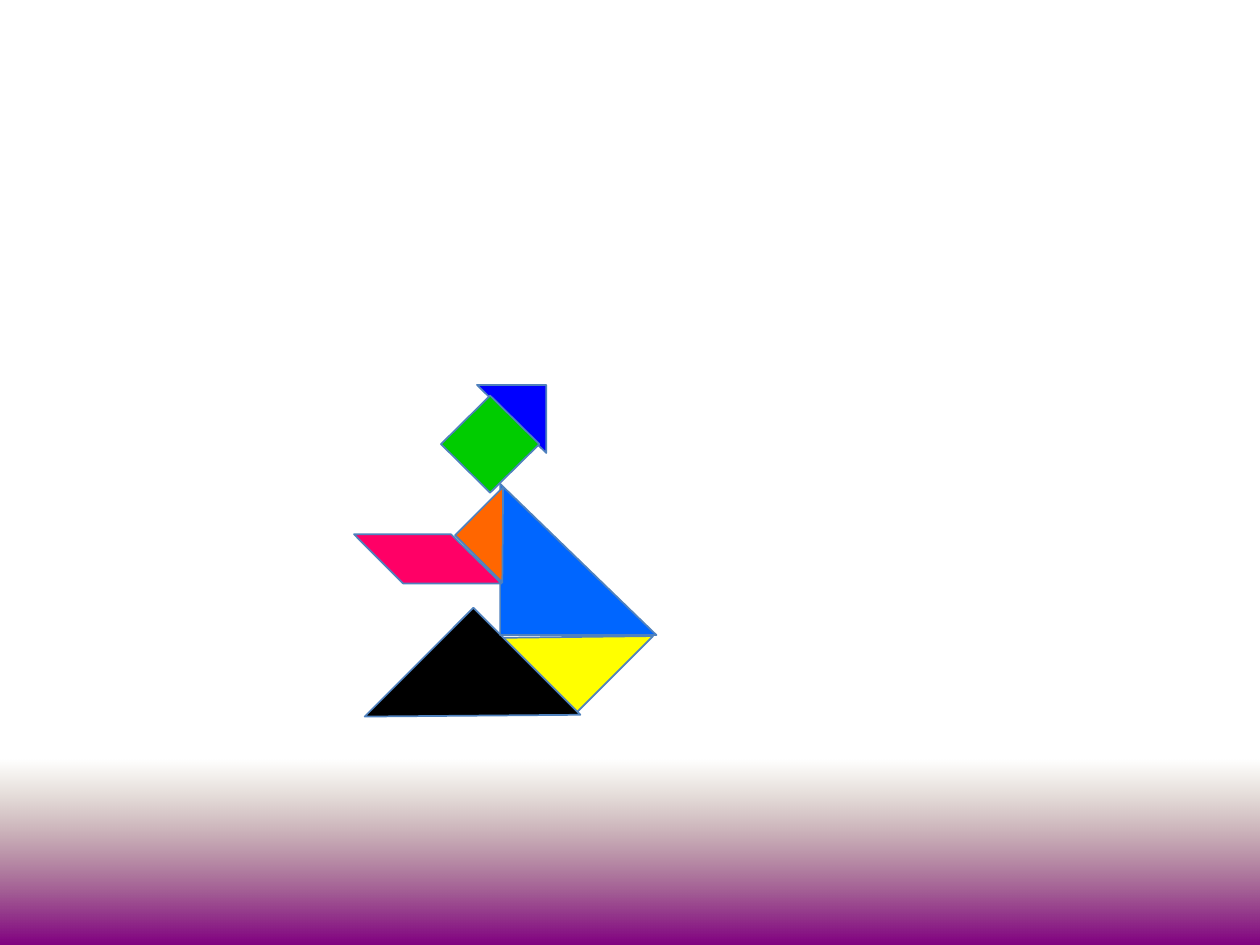
from lxml import etree
from pptx import Presentation
from pptx.dml.color import RGBColor
from pptx.enum.shapes import MSO_SHAPE
from pptx.oxml.ns import qn
from pptx.util import Inches, Pt

RECTANGLE = MSO_SHAPE.RECTANGLE
TRIANGLE = MSO_SHAPE.RIGHT_TRIANGLE
DIAMOND = MSO_SHAPE.DIAMOND
BLANK_LAYOUT = 6
OUTLINE = "4F81BD"

# Tangram triangles: left, top, width, height within the figure, rotation, colour
TRIANGLES = [
    (1.35, 1.62, 0.85, 0.87, 45, "FFFF00"),
    (0.35, 2.07, 1.2, 1.22, 225, "000000"),
    (0.99, 0.05, 0.54, 0.55, 270, "0000FF"),
    (1.19, 0.82, 1.2, 1.24, 90, "0066FF"),
    (0.92, 0.98, 0.54, 0.53, 135, "FF6600"),
]
ARM = [(0.01, 1.24), (0.4, 1.63), (1.18, 1.63), (0.78, 1.24)]
HEAD = (0.7, 0.14, 0.78, 0.77)


def rgb(value):
    return RGBColor.from_string(value)


def style_piece(sp, color):
    sp.shadow.inherit = False
    sp.fill.solid()
    sp.fill.fore_color.rgb = rgb(color)
    sp.line.color.rgb = rgb(OUTLINE)
    sp.line.width = Pt(1)


def add_fade(s, left, top, width, height):
    sp = s.shapes.add_shape(RECTANGLE, Inches(left), Inches(top),
                            Inches(width), Inches(height))
    sp.shadow.inherit = False
    sp.line.fill.background()
    sp.fill.gradient()
    sp.fill.gradient_angle = 270
    for stop, position, color in zip(sp.fill.gradient_stops, (0, 1), ("765E2F", "800080")):
        stop.position = position
        stop.color.rgb = rgb(color)
    # The first stop is fully transparent
    first = next(sp._element.spPr.iter(qn("a:srgbClr")))
    etree.SubElement(first, qn("a:alpha"), val="0")


def add_tangram(s, left, top):
    shapes = s.shapes.add_group_shape().shapes

    def add_piece(kind, x, y, width, height, color):
        sp = shapes.add_shape(kind, Inches(left + x), Inches(top + y),
                              Inches(width), Inches(height))
        style_piece(sp, color)
        return sp

    # Triangles: body, legs, hat and shoulder
    for x, y, width, height, rotation, color in TRIANGLES:
        sp = add_piece(TRIANGLE, x, y, width, height, color)
        sp.rotation = rotation
        sp._element.spPr.xfrm.set("flipH", "1")

    # Arm
    points = [(Inches(left + x), Inches(top + y)) for x, y in ARM]
    builder = shapes.build_freeform(*points[0])
    builder.add_line_segments(points[1:], close=True)
    style_piece(builder.convert_to_shape(), "FF0066")

    # Head
    add_piece(DIAMOND, *HEAD, "00CC00")


def main():
    prs = Presentation()
    prs.slide_width, prs.slide_height = Inches(10), Inches(7.5)
    s = prs.slides.add_slide(prs.slide_layouts[BLANK_LAYOUT])
    s.background.fill.solid()
    s.background.fill.fore_color.rgb = rgb("FFFFFF")
    add_fade(s, 0, 6.03, 10, 1.47)
    add_tangram(s, 2.8, 3)
    prs.save("out.pptx")


if __name__ == "__main__":
    main()
